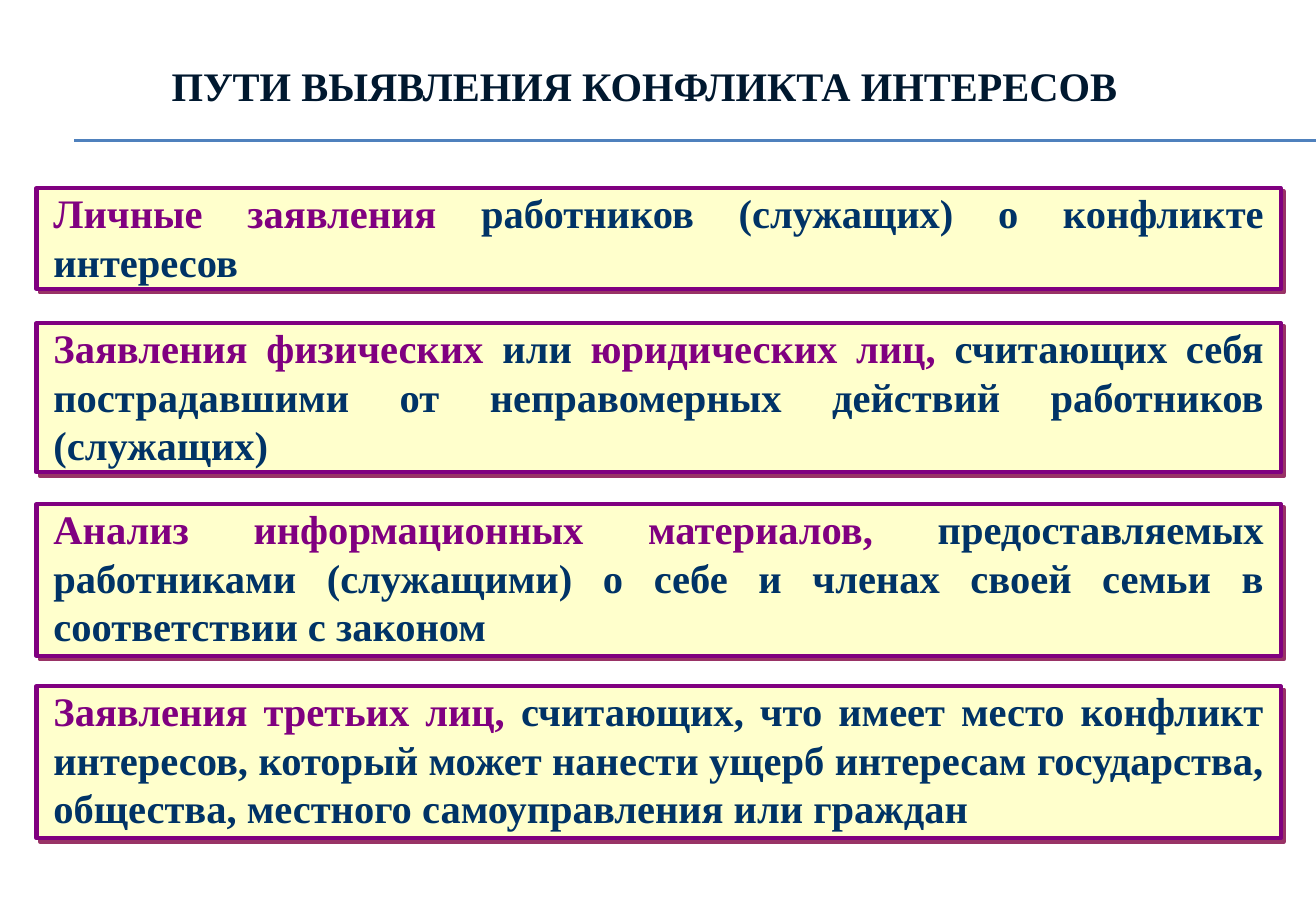
"""Build a slide listing the ways a conflict of interest is identified."""
from lxml import etree
from pptx import Presentation
from pptx import util as u
from pptx.dml.color import RGBColor
from pptx.enum import shapes, text
from pptx.oxml import ns

INK = RGBColor(0x00, 0x18, 0x2F)
NAVY = RGBColor(0x00, 0x33, 0x66)
PURPLE = RGBColor(0x80, 0x00, 0x80)
CREAM = RGBColor(0xFF, 0xFF, 0xCC)
PLUM = RGBColor(0x99, 0x33, 0x66)
BLUE = RGBColor(0x4F, 0x81, 0xBD)

WAYS = [
    (1.55, 0.83, [
        ("Личные заявления ", PURPLE),
        ("работников (служащих) о конфликте интересов", NAVY)]),
    (2.66, 1.23, [
        ("Заявления физических", PURPLE),
        (" или ", NAVY),
        ("юридических лиц,", PURPLE),
        (" считающих себя пострадавшими от неправомерных действий "
         "работников (служащих)", NAVY)]),
    (4.15, 1.25, [
        ("Анализ информационных материалов,", PURPLE),
        (" предоставляемых работниками (служащими) о себе и членах своей "
         "семьи в соответствии с законом", NAVY)]),
    (5.65, 1.25, [
        ("Заявления третьих лиц,", PURPLE),
        (" считающих, что имеет место конфликт интересов, который может "
         "нанести ущерб интересам государства, общества, местного "
         "самоуправления или граждан", NAVY)]),
]


def add_span(para, wording, color):
    span = para.add_run()
    span.text = wording
    span.font.name = "Times New Roman"
    span.font.size = u.Pt(24)
    span.font.bold = True
    span.font.color.rgb = color


deck = Presentation()
deck.slide_width = u.Inches(10.83)
deck.slide_height = u.Inches(7.5)
page = deck.slides.add_slide(deck.slide_layouts[6])

for y in (1.15, 1.16):
    rule = page.shapes.add_connector(
        shapes.MSO_CONNECTOR.STRAIGHT,
        u.Inches(0.61), u.Inches(y), u.Inches(10.83), u.Inches(y))
    rule.line.color.rgb = BLUE
    rule.line.width = u.Pt(0.75)
    etree.SubElement(rule._element.spPr, ns.qn("a:effectLst"))

title = page.shapes.add_textbox(
    u.Inches(1.27), u.Inches(0.42), u.Inches(8.07), u.Inches(0.57))
title.text_frame.word_wrap = False
title.text_frame.vertical_anchor = text.MSO_ANCHOR.MIDDLE
para = title.text_frame.paragraphs[0]
para.alignment = text.PP_ALIGN.CENTER
add_span(para, "ПУТИ ВЫЯВЛЕНИЯ КОНФЛИКТА ИНТЕРЕСОВ", INK)

for top, height, spans in WAYS:
    box = page.shapes.add_shape(
        shapes.MSO_SHAPE.RECTANGLE,
        u.Inches(0.3), u.Inches(top), u.Inches(10.24), u.Inches(height))
    box.fill.solid()
    box.fill.fore_color.rgb = CREAM
    box.line.color.rgb = PURPLE
    box.line.width = u.Pt(2.5)
    box.shadow.inherit = False
    effects = box._element.spPr.find(ns.qn("a:effectLst"))
    shadow = etree.SubElement(
        effects, ns.qn("a:outerShdw"), dist=str(u.Pt(2.8)),
        dir="2700000", algn="ctr", rotWithShape="0")
    etree.SubElement(shadow, ns.qn("a:srgbClr"), val=str(PLUM))

    frame = box.text_frame
    frame.word_wrap = True
    frame.auto_size = text.MSO_AUTO_SIZE.SHAPE_TO_FIT_TEXT
    frame.vertical_anchor = text.MSO_ANCHOR.TOP
    frame.margin_left = frame.margin_right = u.Inches(0.14)
    frame.margin_top = u.Inches(0)
    frame.margin_bottom = u.Inches(0.02)
    para = frame.paragraphs[0]
    para.alignment = text.PP_ALIGN.JUSTIFY
    for wording, color in spans:
        add_span(para, wording, color)

deck.save("out.pptx")
